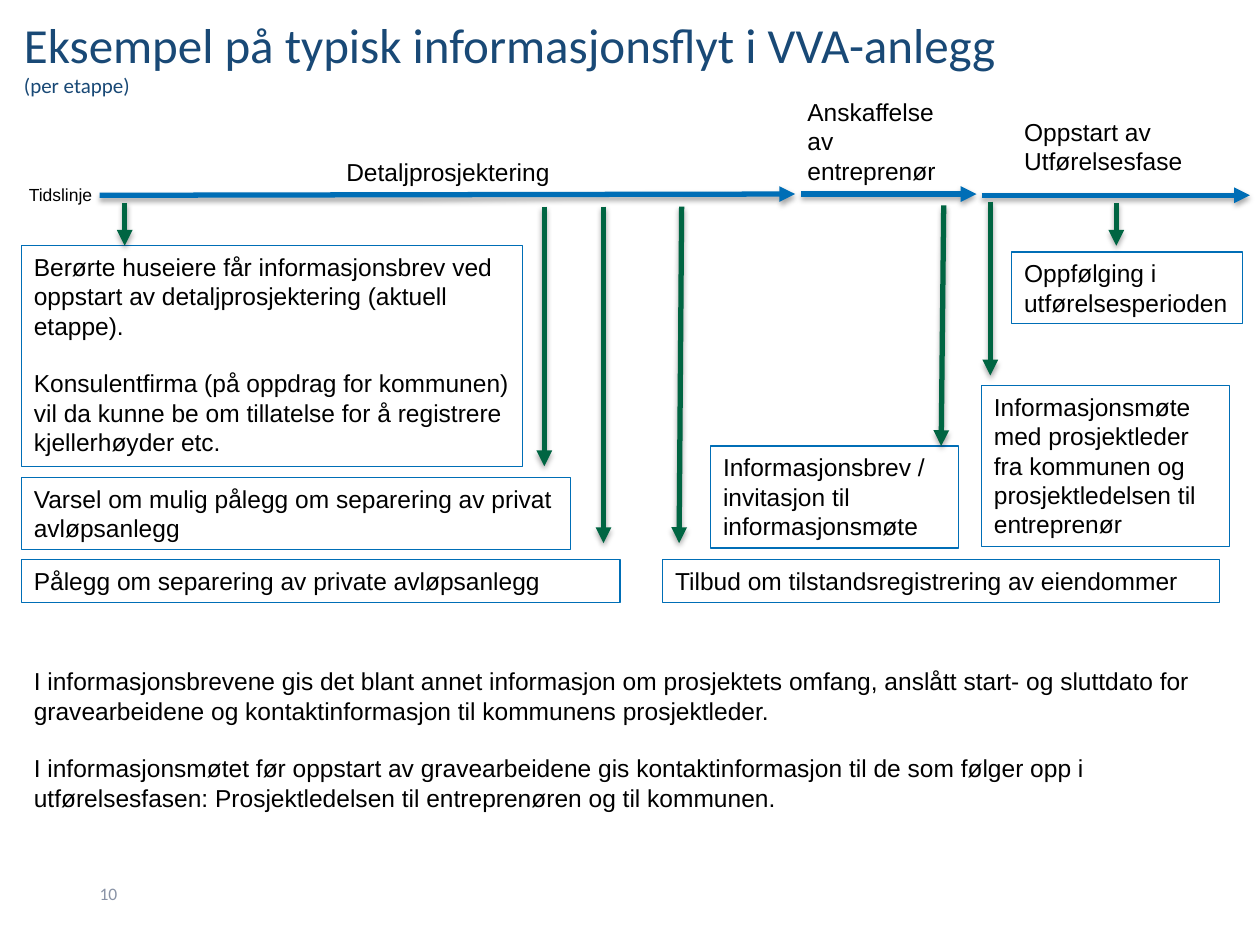
from dataclasses import dataclass

from lxml.etree import SubElement
from pptx import Presentation
from pptx.dml.color import RGBColor
from pptx.enum.shapes import MSO_CONNECTOR, MSO_SHAPE
from pptx.enum.text import MSO_ANCHOR, MSO_AUTO_SIZE, PP_ALIGN
from pptx.oxml.ns import qn
from pptx.util import Inches, Pt


@dataclass(frozen=True)
class Theme:
    title: str = "194976"
    text: str = "000000"
    muted: str = "8993A6"
    blue: str = "006EB6"
    green: str = "006542"
    head_font: str = "Calibri"
    body_font: str = "Arial"
    title_size: int = 28
    subtitle_size: int = 12
    body_size: int = 14
    small_size: int = 10
    line_width: float = 3
    border_width: float = 0.75


T = Theme()

# Content: (text, left, top, width, height) in inches
TITLE = "Eksempel på typisk informasjonsflyt i VVA-anlegg"
SUBTITLE = "(per etappe)"
PHASES = [
    ("Anskaffelse av entreprenør", 6.31, 0.72, 1.44, 0.81),
    ("Oppstart av Utførelsesfase", 8.03, 0.88, 1.66, 0.81),
    ("Detaljprosjektering", 2.65, 1.2, 2.95, 0.81),
]
LEFT = 0.17
STEPS = [
    ("Berørte huseiere får informasjonsbrev ved oppstart av detaljprosjektering "
     "(aktuell etappe).\n"
     "Konsulentfirma (på oppdrag for kommunen) vil da kunne be om tillatelse "
     "for å registrere kjellerhøyder etc.", LEFT, 1.95, 3.98, 1.75),
    ("Varsel om mulig pålegg om separering av privat avløpsanlegg",
     LEFT, 3.79, 4.36, 0.57),
    ("Pålegg om separering av private avløpsanlegg", LEFT, 4.44, 4.75, 0.34),
    ("Tilbud om tilstandsregistrering av eiendommer", 5.26, 4.44, 4.42, 0.34),
    ("Informasjonsbrev / invitasjon til informasjonsmøte", 5.64, 3.54, 1.97, 0.81),
    ("Oppfølging i utførelsesperioden", 8.03, 2, 1.83, 0.57),
    ("Informasjonsmøte med prosjektleder fra kommunen og prosjektledelsen til "
     "entreprenør", 7.79, 3.06, 1.97, 1.28),
]
SUMMARY = (
    "I informasjonsbrevene gis det blant annet informasjon om prosjektets omfang, "
    "anslått start- og sluttdato for gravearbeidene og kontaktinformasjon til "
    "kommunens prosjektleder.\n"
    "I informasjonsmøtet før oppstart av gravearbeidene gis kontaktinformasjon til "
    "de som følger opp i utførelsesfasen: Prosjektledelsen til entreprenøren og til "
    "kommunen.")

# Arrows: (x1, y1, x2, y2)
TIMELINE = [(0.79, 1.55, 6.31, 1.54), (6.36, 1.54, 7.75, 1.54), (7.79, 1.55, 9.92, 1.55)]
DROPS = [
    (0.99, 1.61, 0.99, 1.95), (4.32, 1.64, 4.32, 3.7), (4.79, 1.64, 4.79, 4.31),
    (5.41, 1.64, 5.39, 4.31), (7.49, 1.63, 7.47, 3.54), (8.86, 1.61, 8.86, 1.95),
    (7.86, 1.6, 7.86, 2.98),
]


def style(font, size, color, name):
    font.size, font.name = Pt(size), name
    font.color.rgb = RGBColor.from_string(color)


def write(sp, text, size=T.body_size, color=T.text, font=T.body_font,
          anchor=MSO_ANCHOR.TOP, inset=0.1):
    """Fill a shape with text; each line becomes a spaced paragraph."""
    tf = sp.text_frame
    tf.word_wrap, tf.auto_size, tf.vertical_anchor = True, MSO_AUTO_SIZE.NONE, anchor
    tf.margin_left = tf.margin_right = Inches(inset)
    tf.margin_top = tf.margin_bottom = Inches(0.05)
    for i, line in enumerate(text.split("\n")):
        p = tf.add_paragraph() if i else tf.paragraphs[0]
        p.alignment = PP_ALIGN.LEFT
        if i:
            p.space_before = Pt(16)
        r = p.add_run()
        r.text = line
        style(r.font, size, color, font)
    return tf


def label(s, text, *box, **fmt):
    return write(s.shapes.add_textbox(*map(Inches, box)), text, **fmt)


def step(s, text, *box):
    sp = s.shapes.add_shape(MSO_SHAPE.RECTANGLE, *map(Inches, box))
    sp.shadow.inherit = False
    sp.fill.background()
    sp.line.color.rgb = RGBColor.from_string(T.blue)
    sp.line.width = Pt(T.border_width)
    write(sp, text)


def arrow(s, color, *ends):
    c = s.shapes.add_connector(MSO_CONNECTOR.STRAIGHT, *map(Inches, ends))
    c.line.color.rgb = RGBColor.from_string(color)
    c.line.width = Pt(T.line_width)
    SubElement(c.line._get_or_add_ln(), qn("a:tailEnd"), type="triangle")
    # Soft shadow straight below the line
    effects = SubElement(c._element.spPr, qn("a:effectLst"))
    shadow = SubElement(effects, qn("a:outerShdw"), blurRad=str(Pt(3.1)),
                        dist=str(Pt(1.8)), dir="5400000", rotWithShape="0")
    black = SubElement(shadow, qn("a:srgbClr"), val=T.text)
    SubElement(black, qn("a:alpha"), val="35000")


def add_title(s):
    sp = s.shapes.title
    sp.left, sp.top, sp.width, sp.height = map(Inches, (0.09, -0.18, 8.63, 1.25))
    tf = write(sp, TITLE, size=T.title_size, color=T.title, font=T.head_font,
               anchor=MSO_ANCHOR.MIDDLE)
    p = tf.paragraphs[0]
    p.line_spacing = 1.0
    p.add_line_break()
    SubElement(p._p.find(qn("a:br")), qn("a:rPr"), sz=str(T.title_size * 100))
    r = p.add_run()
    r.text = SUBTITLE
    style(r.font, T.subtitle_size, T.title, T.head_font)


def main():
    prs = Presentation()
    prs.slide_width, prs.slide_height = Inches(10), Inches(7.5)
    s = prs.slides.add_slide(prs.slide_layouts[5])
    add_title(s)

    # Phases along the timeline
    for phase in PHASES:
        label(s, *phase)
    label(s, "Tidslinje", 0.13, 1.41, 1.08, 0.74, size=T.small_size)
    for ends in TIMELINE:
        arrow(s, T.blue, *ends)

    # Steps and the arrows leading to them
    for box in STEPS:
        step(s, *box)
    for ends in DROPS:
        arrow(s, T.green, *ends)

    # Summary and page number
    label(s, SUMMARY, LEFT, 5.24, 9.51, 1.28)
    label(s, "10", 0.79, 6.95, 0.81, 0.28, size=T.small_size, color=T.muted,
          font=T.head_font, anchor=MSO_ANCHOR.MIDDLE, inset=0)
    prs.save("out.pptx")


if __name__ == "__main__":
    main()
